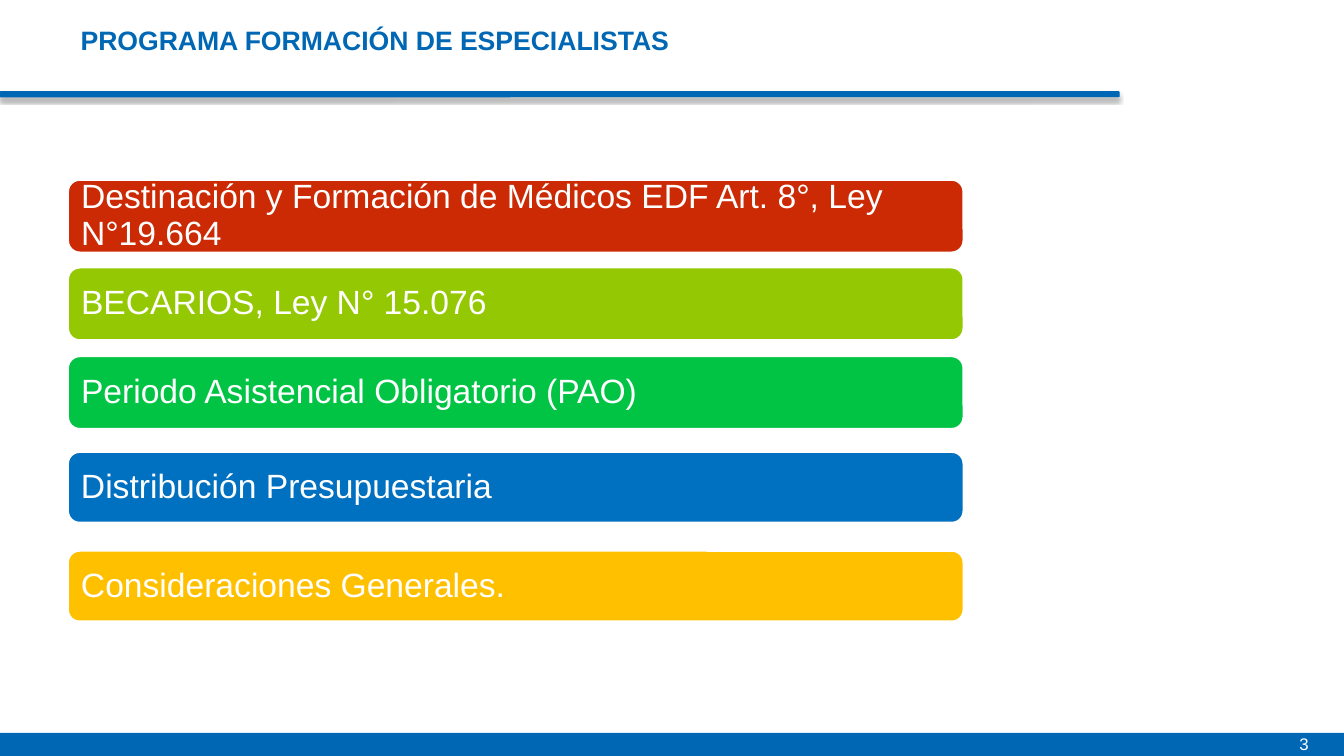
from lxml import etree
from pptx import Presentation
from pptx import util as u
from pptx.dml.color import RGBColor
from pptx.enum import shapes, text
from pptx.oxml.ns import qn

Inches, Pt = u.Inches, u.Pt
FONT = "Arial"
COLORS = {
    "brand": "0067B4", "white": "FFFFFF", "shadow": "000000",
    "red": "CC2A04", "lime": "94C803", "green": "01C444",
    "blue": "0070C0", "amber": "FFC000",
}
BAR_LEFT, BAR_WIDTH = 0.67, 8.89
# Topic, colour, top, height
TOPICS = [
    ("Destinación y Formación de Médicos EDF Art. 8°, Ley N°19.664", "red", 1.78, 0.73),
    ("BECARIOS, Ley N° 15.076", "lime", 2.65, 0.73),
    ("Periodo Asistencial Obligatorio (PAO)", "green", 3.53, 0.73),
    ("Distribución Presupuestaria", "blue", 4.48, 0.71),
    ("Consideraciones Generales.", "amber", 5.46, 0.71),
]


def rgb(name):
    return RGBColor.from_string(COLORS[name])


def write(tf, content, size, color, inset, bold=False):
    tf.word_wrap = True
    tf.margin_left = tf.margin_right = Inches(inset)
    tf.margin_top = tf.margin_bottom = Inches(inset)
    p = tf.paragraphs[0]
    p.text = content
    p.alignment = text.PP_ALIGN.LEFT
    p.font.name, p.font.size, p.font.bold = FONT, Pt(size), bold
    p.font.color.rgb = rgb(color)
    return p


def add_block(slide, kind, box, fill, line=None, line_width=0.75):
    sp = slide.shapes.add_shape(kind, *map(Inches, box))
    sp.shadow.inherit = False
    sp.fill.solid()
    sp.fill.fore_color.rgb = rgb(fill)
    if line:
        sp.line.color.rgb = rgb(line)
        sp.line.width = Pt(line_width)
    else:
        sp.line.fill.background()
    return sp


def add_label(slide, box, content, size, color, inset, bold=False):
    tf = slide.shapes.add_textbox(*map(Inches, box)).text_frame
    write(tf, content, size, color, inset, bold)


def add_topic(slide, content, fill, top, height):
    sp = add_block(slide, shapes.MSO_SHAPE.ROUNDED_RECTANGLE,
                   (BAR_LEFT, top, BAR_WIDTH, height), fill, "white", 2)
    sp.text_frame.vertical_anchor = text.MSO_ANCHOR.MIDDLE
    p = write(sp.text_frame, content, 24, "white", 0.1)
    p.line_spacing = 0.9


def drop_shadow(sp, blur, distance, opacity):
    effects = sp._element.spPr.find(qn("a:effectLst"))
    shadow = etree.SubElement(effects, qn("a:outerShdw"), blurRad=str(Pt(blur)),
                              dist=str(Pt(distance)), dir="5400000", rotWithShape="0")
    color = etree.SubElement(shadow, qn("a:srgbClr"), val=COLORS["shadow"])
    etree.SubElement(color, qn("a:alpha"), val=str(opacity * 1000))


def main():
    prs = Presentation()
    prs.slide_width, prs.slide_height = Inches(13.33), Inches(7.5)
    slide = prs.slides.add_slide(prs.slide_layouts[6])

    # Header rule
    rule = add_block(slide, shapes.MSO_SHAPE.ROUNDED_RECTANGLE,
                     (0, 0.91, 11.1, 0.05), "brand", "brand")
    rule.adjustments[0] = 0.12
    drop_shadow(rule, 3.1, 1.8, 35)

    # Footer band and page number
    add_block(slide, shapes.MSO_SHAPE.RECTANGLE, (0, 7.27, 13.33, 0.23), "brand")
    add_label(slide, (12.79, 7.23, 0.5, 0.27), "3", 12, "white", 0.1)
    number = slide.shapes[-1].text_frame
    number.margin_top = number.margin_bottom = Inches(0.05)

    # Title
    add_label(slide, (0.8, 0.24, 10.6, 0.33), "PROGRAMA FORMACIÓN DE ESPECIALISTAS",
              19, "brand", 0, bold=True)

    # Topic bars
    for topic in TOPICS:
        add_topic(slide, *topic)

    prs.save("out.pptx")


if __name__ == "__main__":
    main()
